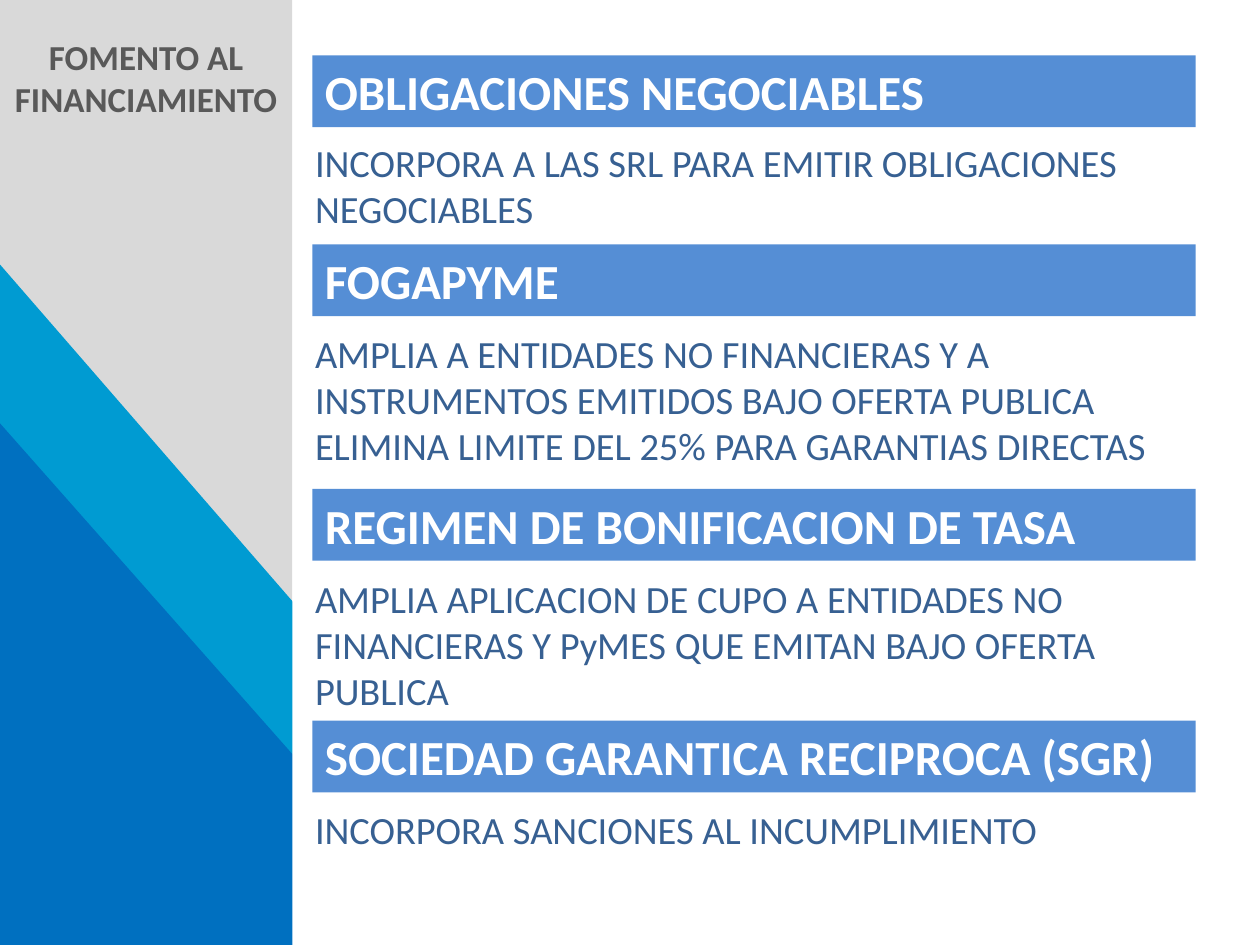
from dataclasses import dataclass

from lxml.etree import SubElement
from pptx import Presentation
from pptx.dml.color import RGBColor
from pptx.enum.shapes import MSO_SHAPE as Shape
from pptx.enum.text import MSO_ANCHOR as Anchor, MSO_AUTO_SIZE as AutoSize, PP_ALIGN as Align
from pptx.oxml.ns import qn
from pptx.util import Inches, Pt


@dataclass(frozen=True)
class Theme:
    font: str = "Calibri"
    panel: str = "D9D9D9"
    light_wedge: str = "009BD2"
    dark_wedge: str = "0070C0"
    white: str = "FFFFFF"
    bar: str = "558ED5"
    title: str = "595959"
    body: str = "376092"
    title_size: int = 20
    heading_size: int = 28
    body_size: int = 22


THEME = Theme()
COMPARISON_LAYOUT = 4
BAR_LEFT, BAR_WIDTH, BAR_HEIGHT = 2.48, 7.01, 0.57
BODY_LEFT, BODY_WIDTH = 2.4, 7.24

# left, top, width, height, preset and fill, from back to front
BACKDROP = [
    (0, 0, 2.32, 7.5, Shape.RECTANGLE, THEME.panel),
    (0, 2.1, 4.69, 5.4, Shape.RIGHT_TRIANGLE, THEME.light_wedge),
    (0, 3.36, 3.66, 4.14, Shape.RIGHT_TRIANGLE, THEME.dark_wedge),
    (2.32, 0, 7.68, 7.5, Shape.RECTANGLE, THEME.white),
]

# heading, bar top, body top, body height, body paragraphs
SECTIONS = [
    ("OBLIGACIONES NEGOCIABLES", 0.44, 1.05, 0.84,
     ["INCORPORA A LAS SRL PARA EMITIR OBLIGACIONES NEGOCIABLES"]),
    ("FOGAPYME", 1.94, 2.57, 1.21,
     ["AMPLIA A ENTIDADES NO FINANCIERAS Y A INSTRUMENTOS EMITIDOS BAJO OFERTA PUBLICA",
      "ELIMINA LIMITE DEL 25% PARA GARANTIAS DIRECTAS"]),
    ("REGIMEN DE BONIFICACION DE TASA", 3.88, 4.51, 1.21,
     ["AMPLIA APLICACION DE CUPO A ENTIDADES NO FINANCIERAS Y PyMES "
      "QUE EMITAN BAJO OFERTA PUBLICA"]),
    ("SOCIEDAD GARANTICA RECIPROCA (SGR)", 5.72, 6.35, 0.47,
     ["INCORPORA SANCIONES AL INCUMPLIMIENTO"]),
]


def add_block(slide, left, top, width, height, preset, fill):
    block = slide.shapes.add_shape(
        preset, Inches(left), Inches(top), Inches(width), Inches(height))
    block.shadow.inherit = False
    block.fill.solid()
    block.fill.fore_color.rgb = RGBColor.from_string(fill)
    block.line.fill.background()
    return block


def write(shape, paragraphs, size, color, bold=False, align=Align.LEFT):
    frame = shape.text_frame
    frame.text = "\n".join(paragraphs)
    frame.word_wrap = True
    frame.auto_size = AutoSize.NONE
    frame.vertical_anchor = Anchor.TOP
    for paragraph in frame.paragraphs:
        paragraph.alignment = align
        paragraph.space_before = Pt(0)
        font = paragraph.font
        font.name, font.size, font.bold = THEME.font, Pt(size), bold
        font.color.rgb = RGBColor.from_string(color)


def place_in_front(placeholder, left, top, width, height):
    """Move a placeholder to its spot, above the shapes added so far."""
    placeholder.left, placeholder.top = Inches(left), Inches(top)
    placeholder.width, placeholder.height = Inches(width), Inches(height)
    placeholder.element.getparent().append(placeholder.element)


def remove_bullets(placeholder):
    for paragraph in placeholder.text_frame.paragraphs:
        properties = paragraph.font._element.getparent()
        properties.set("marL", "0")
        properties.set("indent", "0")
        bullet = SubElement(properties, qn("a:buNone"))
        properties.find(qn("a:defRPr")).addprevious(bullet)


def add_title(slide, text):
    title = slide.shapes.title
    place_in_front(title, 0, 0.23, 2.32, 0.77)
    write(title, [text], THEME.title_size, THEME.title, bold=True, align=Align.CENTER)


def add_section(slide, body, heading, bar_top, body_top, body_height, paragraphs):
    bar = add_block(slide, BAR_LEFT, bar_top, BAR_WIDTH, BAR_HEIGHT,
                    Shape.RECTANGLE, THEME.bar)
    write(bar, [heading], THEME.heading_size, THEME.white, bold=True)
    place_in_front(body, BODY_LEFT, body_top, BODY_WIDTH, body_height)
    write(body, paragraphs, THEME.body_size, THEME.body)
    remove_bullets(body)


def main():
    deck = Presentation()
    deck.slide_width, deck.slide_height = Inches(10), Inches(7.5)
    slide = deck.slides.add_slide(deck.slide_layouts[COMPARISON_LAYOUT])
    bodies = list(slide.placeholders)[1:]
    for block in BACKDROP:
        add_block(slide, *block)
    add_title(slide, "FOMENTO AL FINANCIAMIENTO")
    for body, section in zip(bodies, SECTIONS):
        add_section(slide, body, *section)
    deck.save("out.pptx")


if __name__ == "__main__":
    main()
